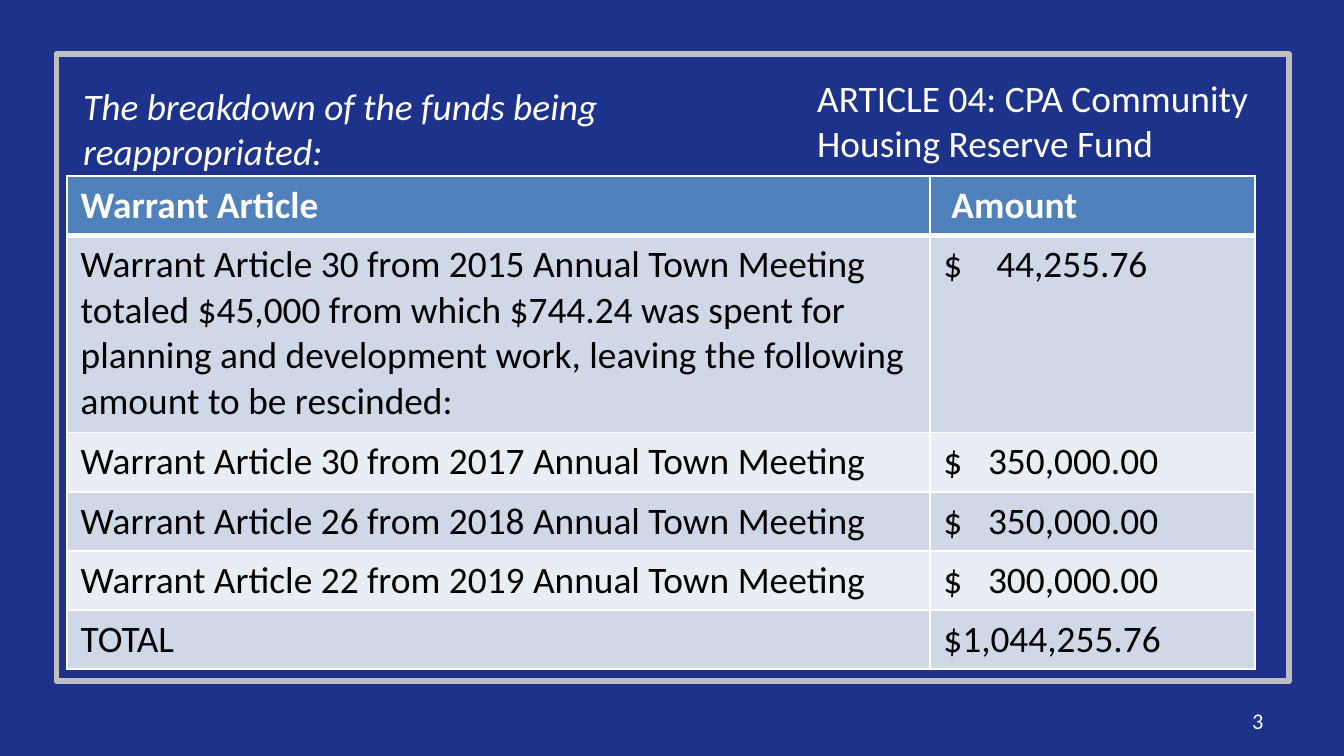
import pptx
import pptx.util
from lxml import etree
from pptx.dml.color import RGBColor
from pptx.enum.shapes import MSO_SHAPE
from pptx.enum.text import MSO_ANCHOR, MSO_AUTO_SIZE, PP_ALIGN
from pptx.oxml.ns import qn
from pptx.util import Inches, Pt

# Content
TITLE = "ARTICLE 04: CPA Community Housing Reserve Fund"
INTRO = "The breakdown of the funds being reappropriated:"
PAGE_NUMBER = "3"
ROWS = [
    ("Warrant Article", "Amount"),
    ("Warrant Article 30 from 2015 Annual Town Meeting totaled $45,000 from "
     "which $744.24 was spent for planning and development work, leaving the "
     "following amount to be rescinded:", "$\t44,255.76"),
    ("Warrant Article 30 from 2017 Annual Town Meeting", "$\t350,000.00"),
    ("Warrant Article 26 from 2018 Annual Town Meeting", "$\t350,000.00"),
    ("Warrant Article 22 from 2019 Annual Town Meeting", "$\t300,000.00"),
    ("TOTAL", "$1,044,255.76"),
]

# Style
FONT = "Calibri"
NAVY = RGBColor(0x1D, 0x32, 0x8B)
WHITE = RGBColor(0xFF, 0xFF, 0xFF)
BLACK = RGBColor(0x00, 0x00, 0x00)
GRAY = RGBColor(0xBF, 0xBF, 0xBF)
HEADER_BLUE = RGBColor(0x4F, 0x81, 0xBD)
BANDS = (RGBColor(0xE9, 0xED, 0xF4), RGBColor(0xD0, 0xD8, 0xE8))

COLUMN_WIDTHS = (6.42, 2.42)
ROW_HEIGHT, TALL_ROW_HEIGHT = 0.44, 1.47
AMOUNT_TAB, FIRST_AMOUNT_TAB = 1.6, 1.52


def place(shape, left, top, width, height):
    shape.left, shape.top = Inches(left), Inches(top)
    shape.width, shape.height = Inches(width), Inches(height)


def write(text_frame, text, size=20, color=WHITE, bold=False, italic=False,
          align=PP_ALIGN.LEFT):
    text_frame.text = text
    text_frame.word_wrap = True
    paragraph = text_frame.paragraphs[0]
    paragraph.alignment = align
    for run in paragraph.runs:
        font = run.font
        font.name, font.size, font.color.rgb = FONT, Pt(size), color
        font.bold, font.italic = bold, italic
    return paragraph


def set_borders(cell, bottom_width):
    properties = cell._tc.get_or_add_tcPr()
    for side in ("L", "R", "T", "B"):
        width = bottom_width if side == "B" else 1
        line = etree.SubElement(properties, qn(f"a:ln{side}"), w=str(Pt(width)))
        fill = etree.SubElement(line, qn("a:solidFill"))
        etree.SubElement(fill, qn("a:srgbClr"), val=str(WHITE))


def add_right_tab(paragraph, position):
    tabs = etree.SubElement(paragraph._p.get_or_add_pPr(), qn("a:tabLst"))
    etree.SubElement(tabs, qn("a:tab"), pos=str(Inches(position)), algn="r")


# Widescreen slide, 16:9
presentation = pptx.Presentation()
presentation.slide_width = Inches(10)
presentation.slide_height = Inches(10 * 9 / 16)
slide = presentation.slides.add_slide(presentation.slide_layouts[5])
slide.background.fill.solid()
slide.background.fill.fore_color.rgb = NAVY

# Frame
frame = slide.shapes.add_shape(MSO_SHAPE.RECTANGLE, Inches(0.42), Inches(0.4),
                               Inches(9.17), Inches(4.67))
frame.shadow.inherit = False
frame.fill.background()
frame.line.color.rgb = GRAY
frame.line.width = Pt(3)

# Table
table = slide.shapes.add_table(
    len(ROWS), len(COLUMN_WIDTHS), Inches(0.5), Inches(1.31),
    Inches(sum(COLUMN_WIDTHS)),
    Inches(ROW_HEIGHT * (len(ROWS) - 1) + TALL_ROW_HEIGHT)).table
for column, width in zip(table.columns, COLUMN_WIDTHS):
    column.width = Inches(width)
for row_index, values in enumerate(ROWS):
    is_header = row_index == 0
    is_tall = row_index == 1
    table.rows[row_index].height = Inches(TALL_ROW_HEIGHT if is_tall else ROW_HEIGHT)
    for column_index, value in enumerate(values):
        cell = table.cell(row_index, column_index)
        paragraph = write(cell.text_frame, value, bold=is_header,
                          color=WHITE if is_header else BLACK)
        if "\t" in value:
            add_right_tab(paragraph, FIRST_AMOUNT_TAB if is_tall else AMOUNT_TAB)
        set_borders(cell, bottom_width=3 if is_header else 1)
        cell.fill.solid()
        cell.fill.fore_color.rgb = HEADER_BLUE if is_header else BANDS[row_index % 2]
table.cell(0, 1).margin_left = Inches(0.16)

# Title and introduction
title = slide.shapes.title
place(title, 5.98, 0.51, 3.5, 0.77)
write(title.text_frame, TITLE)
intro = slide.shapes.add_textbox(Inches(0.52), Inches(0.57), Inches(5.23), Inches(0.77))
write(intro.text_frame, INTRO, italic=True)
for shape in (title, intro):
    shape.text_frame.vertical_anchor = MSO_ANCHOR.TOP
    shape.text_frame.auto_size = MSO_AUTO_SIZE.SHAPE_TO_FIT_TEXT

# Page number
number = slide.shapes.add_textbox(Inches(7.17), Inches(5.21), Inches(2.33), Inches(0.3))
write(number.text_frame, PAGE_NUMBER, size=12, align=PP_ALIGN.RIGHT)
number.text_frame.vertical_anchor = MSO_ANCHOR.MIDDLE

presentation.save("out.pptx")
